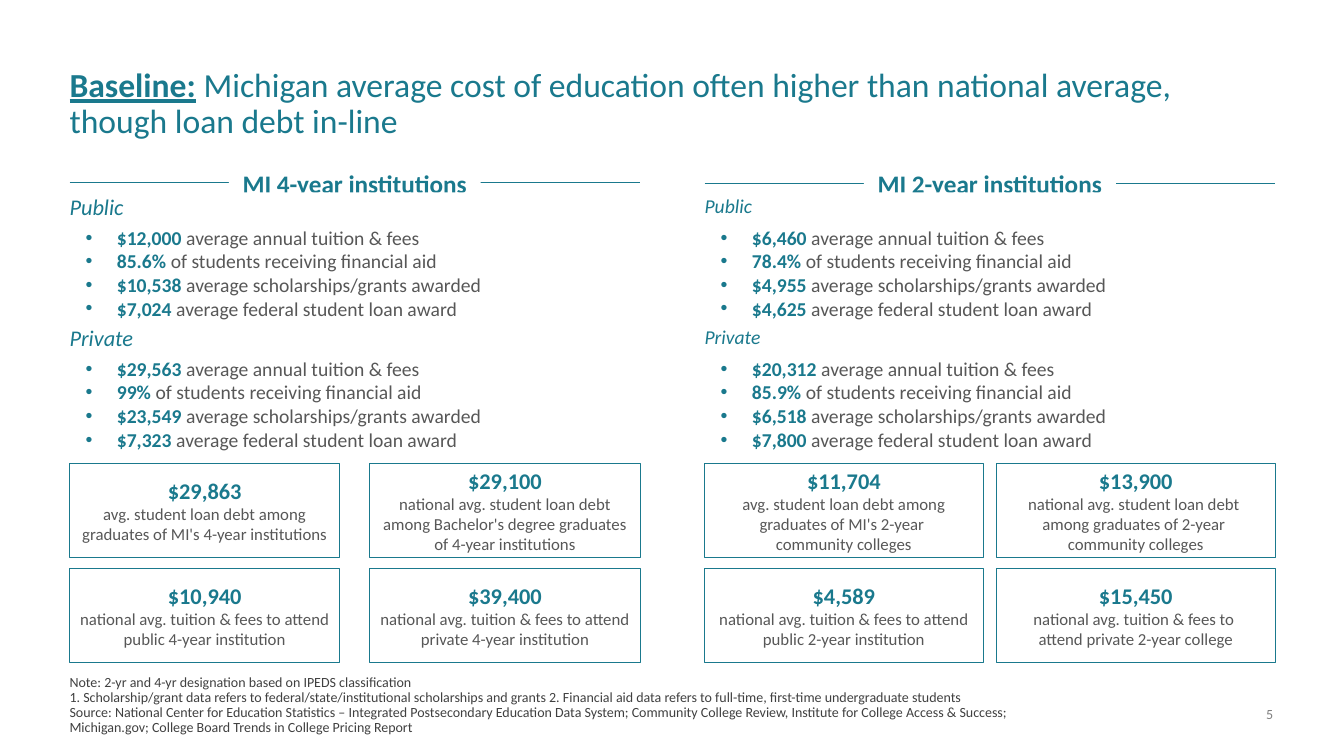
from dataclasses import dataclass

from lxml import etree
from pptx import Presentation
from pptx.dml.color import RGBColor
from pptx.enum.shapes import MSO_CONNECTOR, MSO_SHAPE
from pptx.enum.text import MSO_ANCHOR, MSO_AUTO_SIZE, PP_ALIGN
from pptx.oxml.ns import qn
from pptx.util import Pt

TOP, MIDDLE, BOTTOM = MSO_ANCHOR.TOP, MSO_ANCHOR.MIDDLE, MSO_ANCHOR.BOTTOM
LEFT, CENTER, RIGHT = PP_ALIGN.LEFT, PP_ALIGN.CENTER, PP_ALIGN.RIGHT
STRAIGHT, RECTANGLE = MSO_CONNECTOR.STRAIGHT, MSO_SHAPE.RECTANGLE
FIXED_SIZE = MSO_AUTO_SIZE.NONE
COMPARISON_LAYOUT = 4


@dataclass(frozen=True)
class Theme:
    """Colours, font and type sizes of the slide."""
    font: str = "Calibri"
    teal: str = "1A798D"
    body: str = "575757"
    note: str = "404040"
    number: str = "808080"
    white: str = "FFFFFF"
    title_size: int = 24
    heading_size: int = 18
    figure_size: int = 16
    list_size: int = 14
    caption_size: int = 12
    note_size: int = 10


THEME = Theme()
MARGIN = 49.7
COLUMN_WIDTH = 407.5
HEADING_WIDTH, LABEL_HEIGHT = 180, 19.4
SECTION_TOP, SECTION_PITCH = 137.5, 93.6
LIST_OFFSET, LIST_HEIGHT = 23.8, 72
CARD_TOP, CARD_PITCH, CARD_HEIGHT = 331.2, 74.9, 67

METRICS = (
    "average annual tuition & fees",
    "of students receiving financial aid",
    "average scholarships/grants awarded",
    "average federal student loan award",
)
COLUMNS = (
    {
        "heading": "MI 4-year institutions",
        "left": MARGIN, "rule_y": 130.4, "card_width": 193, "label_size": 16,
        "sections": {
            "Public": ("$12,000", "85.6%", "$10,538", "$7,024"),
            "Private": ("$29,563", "99%", "$23,549", "$7,323"),
        },
        "cards": (
            ("$29,863", "avg. student loan debt among graduates of MI's 4-year institutions"),
            ("$29,100", "national avg. student loan debt among Bachelor's degree graduates of 4-year institutions"),
            ("$10,940", "national avg. tuition & fees to attend public 4-year institution"),
            ("$39,400", "national avg. tuition & fees to attend private 4-year institution"),
        ),
    },
    {
        "heading": "MI 2-year institutions",
        "left": 503.3, "rule_y": 131.1, "card_width": 199, "label_size": 14,
        "sections": {
            "Public": ("$6,460", "78.4%", "$4,955", "$4,625"),
            "Private": ("$20,312", "85.9%", "$6,518", "$7,800"),
        },
        "cards": (
            ("$11,704", "avg. student loan debt among graduates of MI's 2-year \ncommunity colleges"),
            ("$13,900", "national avg. student loan debt \namong graduates of 2-year \ncommunity colleges"),
            ("$4,589", "national avg. tuition & fees to attend public 2-year institution"),
            ("$15,450", "national avg. tuition & fees to \nattend private 2-year college"),
        ),
    },
)
NOTES = (
    "Note: 2-yr and 4-yr designation based on IPEDS classification",
    "1. Scholarship/grant data refers to federal/state/institutional scholarships and grants "
    "2. Financial aid data refers to full-time, first-time undergraduate students",
    "Source: National Center for Education Statistics – Integrated Postsecondary Education Data System; "
    "Community College Review, Institute for College Access & Success; Michigan.gov; "
    "College Board Trends in College Pricing Report",
)


def apply(target, formats):
    """Set every attribute named in the formats."""
    for name, value in formats.items():
        setattr(target, name, value)


def styled(text, size, color, **formats):
    """Pair a piece of text with its size, colour and font formats."""
    return text, color, {"name": THEME.font, "size": Pt(size), "bold": False, **formats}


def add_piece(paragraph, piece):
    """Add styled text, with its line breaks, to a paragraph."""
    text, color, formats = piece
    for index, line in enumerate(text.split("\n")):
        if index:
            paragraph.add_line_break()
        run = paragraph.add_run()
        run.text = line
        apply(run.font, formats)
        run.font.color.rgb = RGBColor.from_string(color)


def add_bullet(paragraph):
    """Give a paragraph a hanging teal bullet."""
    properties = paragraph._p.get_or_add_pPr()
    properties.set("marL", str(Pt(33.8)))
    properties.set("indent", str(Pt(-22.3)))
    color = etree.SubElement(properties, qn("a:buClr"))
    etree.SubElement(color, qn("a:srgbClr"), val=THEME.teal)
    etree.SubElement(properties, qn("a:buFont"), typeface="Arial")
    etree.SubElement(properties, qn("a:buChar"), char="•")


def write(shape, lines, align=LEFT, anchor=TOP, inset=0, spacing=1.0, bulleted=False):
    """Fill a shape with lines of styled pieces."""
    frame = shape.text_frame
    sides = ("margin_left", "margin_top", "margin_right", "margin_bottom")
    apply(frame, {"word_wrap": True, "auto_size": FIXED_SIZE, "vertical_anchor": anchor,
                  **dict.fromkeys(sides, Pt(inset))})
    for index, pieces in enumerate(lines):
        paragraph = frame.add_paragraph() if index else frame.paragraphs[0]
        if bulleted:
            add_bullet(paragraph)
        apply(paragraph, {"alignment": align, "line_spacing": spacing,
                          "space_before": Pt(0), "space_after": Pt(0)})
        for piece in pieces:
            add_piece(paragraph, piece)


def place(shape, left, top, width, height):
    """Move and size a placeholder, in points."""
    apply(shape, {"left": Pt(left), "top": Pt(top), "width": Pt(width), "height": Pt(height)})
    return shape


def add_panel(slide, left, top, width, height, fill=None, line=None):
    """Add a flat rectangle with an optional fill and outline."""
    panel = slide.shapes.add_shape(RECTANGLE, Pt(left), Pt(top), Pt(width), Pt(height))
    panel.shadow.inherit = False
    if fill:
        panel.fill.solid()
        panel.fill.fore_color.rgb = RGBColor.from_string(fill)
    else:
        panel.fill.background()
    if line:
        panel.line.color.rgb = RGBColor.from_string(line)
        panel.line.width = Pt(0.75)
    else:
        panel.line.fill.background()
    return panel


def add_heading(slide, text, left, rule_y):
    """Add a column heading set into a horizontal rule."""
    rule = slide.shapes.add_connector(STRAIGHT, Pt(left), Pt(rule_y), Pt(left + COLUMN_WIDTH), Pt(rule_y))
    rule.line.color.rgb = RGBColor.from_string(THEME.teal)
    rule.line.width = Pt(0.75)
    etree.SubElement(rule._element.spPr, qn("a:effectLst"))
    heading = add_panel(slide, left + (COLUMN_WIDTH - HEADING_WIDTH) / 2, rule_y - 9.4,
                        HEADING_WIDTH, LABEL_HEIGHT, fill=THEME.white)
    write(heading, [[styled(text, THEME.heading_size, THEME.teal, bold=True)]], CENTER, MIDDLE)


def add_section(slide, facts, name, values, left, top, label_size):
    """Add a section label and fill its list of facts."""
    label = add_panel(slide, left, top, COLUMN_WIDTH, LABEL_HEIGHT, fill=THEME.white)
    write(label, [[styled(name, label_size, THEME.teal, italic=True)]], anchor=MIDDLE)
    place(facts, left, top + LIST_OFFSET, COLUMN_WIDTH, LIST_HEIGHT)
    write(facts, [[styled(f"{value} ", THEME.list_size, THEME.teal, bold=True),
                   styled(metric, THEME.list_size, THEME.body)]
                  for value, metric in zip(values, METRICS)], bulleted=True)


def add_card(slide, figure, caption, left, top, width):
    """Add an outlined card with a figure over its caption."""
    card = add_panel(slide, left, top, width, CARD_HEIGHT, line=THEME.teal)
    write(card, [[styled(figure, THEME.figure_size, THEME.teal, bold=True)],
                 [styled(caption, THEME.caption_size, THEME.body)]], CENTER, MIDDLE, inset=3.6)


def add_column(slide, column, lists):
    """Add one institution column with its sections and cards."""
    left, width = column["left"], column["card_width"]
    add_heading(slide, column["heading"], left, column["rule_y"])
    for index, (name, values) in enumerate(column["sections"].items()):
        add_section(slide, lists[index], name, values, left,
                    SECTION_TOP + index * SECTION_PITCH, column["label_size"])
    for index, (figure, caption) in enumerate(column["cards"]):
        row, side = divmod(index, 2)
        add_card(slide, figure, caption, left + side * (COLUMN_WIDTH - width),
                 CARD_TOP + row * CARD_PITCH, width)


def add_note(slide, lines, color, box, align=LEFT, spacing=1.0):
    """Add small text resting on the bottom of its box."""
    note = slide.shapes.add_textbox(*map(Pt, box))
    write(note, [[styled(line, THEME.note_size, color)] for line in lines], align, BOTTOM, spacing=spacing)


def main():
    """Build and save the slide."""
    deck = Presentation()
    apply(deck, {"slide_width": Pt(960), "slide_height": Pt(540)})
    slide = deck.slides.add_slide(deck.slide_layouts[COMPARISON_LAYOUT])
    title, *lists = slide.placeholders
    place(title, MARGIN, 49, 861, 52.6)
    write(title, [[styled("Baseline:", THEME.title_size, THEME.teal, bold=True, underline=True),
                   styled(" Michigan average cost of education often higher than national average, "
                          "though loan debt in-line", THEME.title_size, THEME.teal)]], spacing=0.9)
    for index, column in enumerate(COLUMNS):
        add_column(slide, column, lists[2 * index:2 * index + 2])
    add_note(slide, NOTES, THEME.note, (MARGIN, 481.7, 711.4, 44), spacing=0.9)
    add_note(slide, ["5"], THEME.number, (879, 504, 30.5, 12.2), RIGHT)
    deck.save("out.pptx")


if __name__ == "__main__":
    main()
